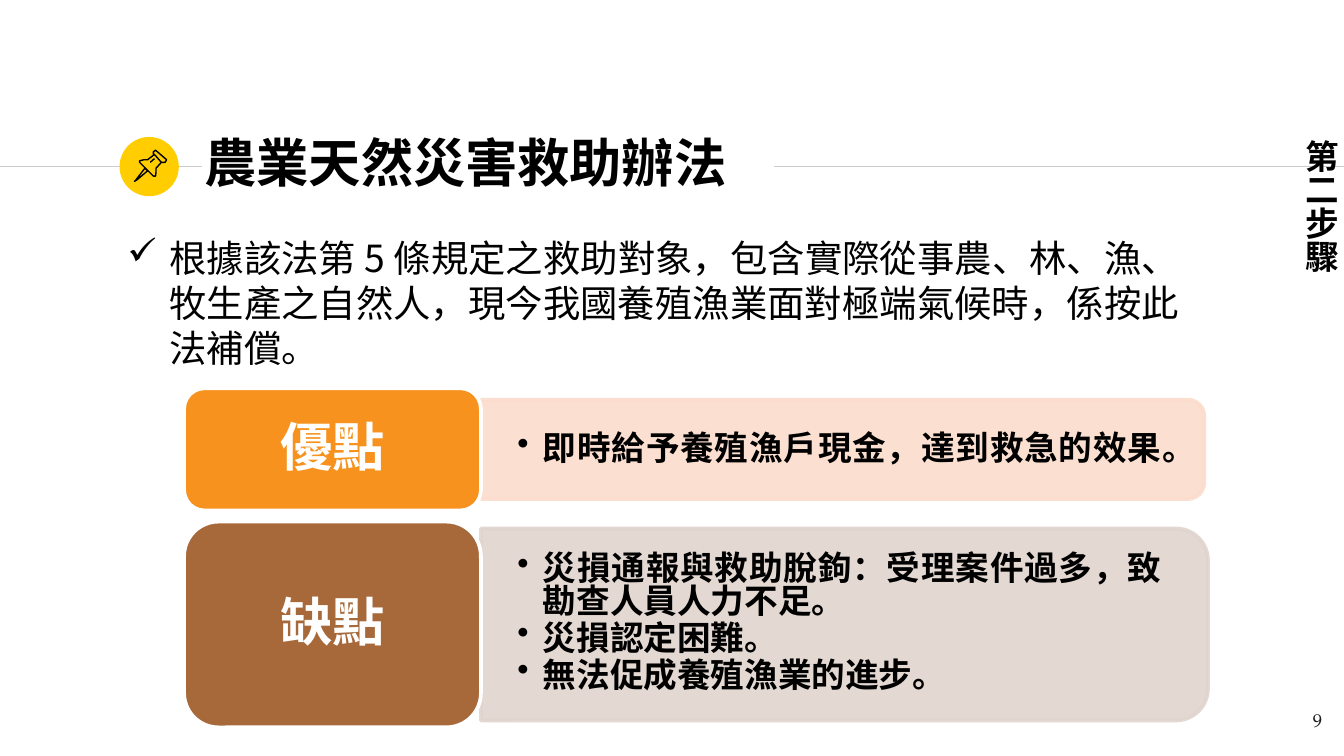
from lxml.etree import SubElement
from pptx import Presentation
from pptx.dml.color import RGBColor
from pptx.enum.shapes import MSO_CONNECTOR as Connector, MSO_SHAPE as Shape
from pptx.enum.text import MSO_ANCHOR as Anchor, MSO_AUTO_SIZE as AutoSize, PP_ALIGN as Align
from pptx.oxml.ns import qn
from pptx.util import Cm, Pt

SANS_JP = "Noto Sans CJK JP"
SANS_SC = "Noto Sans CJK SC"
SERIF = "TeX Gyre Pagella"
BLACK, WHITE = "000000", "FFFFFF"

RULE_Y = 3.15
LABEL_LEFT, LABEL_WIDTH = 3.48, 5.61
PANEL_LEFT = LABEL_LEFT + LABEL_WIDTH

# Outlines of the pushpin, in hundredths of a centimetre: points, closed
PIN_OUTLINES = [
    ([(274, 318), (257, 340), (254, 343), (259, 340), (279, 323)], True),
    ([(292, 292), (305, 307), (312, 307), (315, 302), (294, 284),
      (290, 287), (290, 292)], True),
    ([(292, 292), (279, 302), (272, 302), (264, 304), (264, 307),
      (290, 333), (294, 333), (295, 325), (295, 318), (305, 307)], False),
    ([(284, 307), (292, 300)], False),
]


def color(value):
    return RGBColor.from_string(value)


def place(left, top, width, height):
    return Cm(left), Cm(top), Cm(width), Cm(height)


def set_margins(frame, horizontal, vertical):
    frame.margin_left = frame.margin_right = Cm(horizontal)
    frame.margin_top = frame.margin_bottom = Cm(vertical)


def add_run(para, text, size, font=SANS_JP, tint=BLACK, bold=False):
    span = para.add_run()
    span.text = text
    span.font.size = Pt(size)
    span.font.name = font
    span.font.bold = bold
    span.font.color.rgb = color(tint)
    SubElement(span.font._element, qn("a:ea"), typeface=font)


def add_bullet(para, mark, indent):
    props = para._p.get_or_add_pPr()
    props.set("marL", str(Cm(indent)))
    props.set("indent", str(-Cm(indent)))
    tint = SubElement(props, qn("a:buClr"))
    SubElement(tint, qn("a:srgbClr"), val=BLACK)
    SubElement(props, qn("a:buChar"), char=mark)


def add_text_box(slide, *area, wrap=True):
    frame = slide.shapes.add_textbox(*place(*area)).text_frame
    frame.word_wrap = wrap
    return frame


def add_rule(slide, start, end):
    rule = slide.shapes.add_connector(
        Connector.STRAIGHT, Cm(start), Cm(RULE_Y), Cm(end), Cm(RULE_Y))
    rule.line.color.rgb = color("CCCCCC")
    rule.line.width = Pt(0.75)
    SubElement(rule._element.spPr, qn("a:effectLst"))


def add_block(slide, kind, area, fill, line=None):
    block = slide.shapes.add_shape(kind, *place(*area))
    block.shadow.inherit = False
    block.fill.solid()
    block.fill.fore_color.rgb = color(fill)
    if line:
        block.line.color.rgb = color(line)
        block.line.width = Pt(2)
    else:
        block.line.fill.background()
    return block


def add_pin(slide):
    for points, closed in PIN_OUTLINES:
        builder = slide.shapes.build_freeform(*points[0], scale=Cm(0.01))
        builder.add_line_segments(points[1:], close=closed)
        outline = builder.convert_to_shape()
        outline.shadow.inherit = False
        outline.fill.background()
        outline.line.color.rgb = color(BLACK)
        outline.line.width = Pt(0.75)


def add_title(slide, text):
    title = slide.shapes.title
    title.left, title.top, title.width, title.height = place(3.61, 2.34, 10.49, 1.45)
    frame = title.text_frame
    frame.auto_size = AutoSize.NONE
    frame.word_wrap = False
    frame.vertical_anchor = Anchor.TOP
    para = frame.paragraphs[0]
    para.alignment = Align.LEFT
    add_run(para, text, 28, bold=True)


def add_panel(slide, top, width, height, tint):
    # The preset rounds its top corners, so a quarter turn puts them on the right
    left = PANEL_LEFT + (width - height) / 2
    turned_top = top + (height - width) / 2
    panel = add_block(slide, Shape.ROUND_2_SAME_RECTANGLE,
                      (left, turned_top, height, width), tint, tint)
    panel.rotation = 90
    for shade in panel._element.spPr.iter(qn("a:srgbClr")):
        SubElement(shade, qn("a:alpha"), val="90000")


def add_points(slide, top, width, height, points, spacing):
    inset = height * 0.05
    frame = add_text_box(slide, PANEL_LEFT, top + inset,
                         width - inset, height - 2 * inset)
    frame.vertical_anchor = Anchor.MIDDLE
    set_margins(frame, 0.69, 0.36)
    for number, (text, align) in enumerate(points):
        para = frame.add_paragraph() if number else frame.paragraphs[0]
        add_bullet(para, "•", 0.48)
        para.alignment = align
        para.line_spacing = spacing
        para.space_after = Pt(2.7)
        add_run(para, text, 18, SANS_SC, bold=True)


def add_label(slide, top, height, text, fill):
    label = add_block(slide, Shape.ROUNDED_RECTANGLE,
                      (LABEL_LEFT, top, LABEL_WIDTH, height), fill, WHITE)
    frame = label.text_frame
    frame.vertical_anchor = Anchor.MIDDLE
    set_margins(frame, 0.3, 0.15)
    para = frame.paragraphs[0]
    para.alignment = Align.CENTER
    para.line_spacing = 0.9
    para.space_after = Pt(9.8)
    add_run(para, text, 28, tint=WHITE, bold=True)


def add_row(slide, top, height, label, fill, panel_size, tint, points, spacing):
    width, panel_height = panel_size
    panel_top = top + (height - panel_height) / 2
    add_panel(slide, panel_top, width, panel_height, tint)
    add_points(slide, panel_top, width, panel_height, points, spacing)
    add_label(slide, top, height, label, fill)


def main():
    deck = Presentation()
    deck.slide_width, deck.slide_height = Cm(25.4), Cm(14.29)
    page = deck.slides.add_slide(deck.slide_layouts[5])

    # Heading with rules and pin badge
    add_rule(page, 0, 3.81)
    add_block(page, Shape.OVAL, (2.26, 2.59, 1.12, 1.12), "FFCD00")
    add_rule(page, 14.63, 25.4)
    add_pin(page)
    add_title(page, "農業天然災害救助辦法")

    # Vertical step marker
    frame = add_text_box(page, 24.21, 2.39, 1.27, 2.77, wrap=False)
    frame._txBody.bodyPr.set("vert", "eaVert")
    add_run(frame.paragraphs[0], "第二步驟", 18, bold=True)

    # Introduction
    para = add_text_box(page, 2.16, 4.32, 20.62, 2.82).paragraphs[0]
    add_bullet(para, "✓", 0.79)
    add_run(para, "根據該法第 5 條規定之救助對象，包含實際從事農、林、漁、牧生產之自然人，"
                  "現今我國養殖漁業面對極端氣候時，係按此法補償。", 20)

    # Advantages and drawbacks
    add_row(page, 7.34, 2.31, "優點", "F6921D", (13.67, 1.88), "FBDCCD",
            [("即時給予養殖漁戶現金，達到救急的效果。", Align.JUSTIFY)], 0.9)
    add_row(page, 9.86, 3.89, "缺點", "A7693A", (13.74, 3.63), "E1D4CE",
            [("災損通報與救助脫鉤：受理案件過多，致勘查人員人力不足。", Align.JUSTIFY),
             ("災損認定困難。", Align.JUSTIFY),
             ("無法促成養殖漁業的進步。", Align.LEFT)], 0.8)

    # Page number
    frame = add_text_box(page, 23.72, 13.18, 1.52, 1.09)
    set_margins(frame, 0.25, 0.25)
    frame.paragraphs[0].alignment = Align.RIGHT
    add_run(frame.paragraphs[0], "9", 10, SERIF, "1D1D1B")

    deck.save("out.pptx")


if __name__ == "__main__":
    main()
